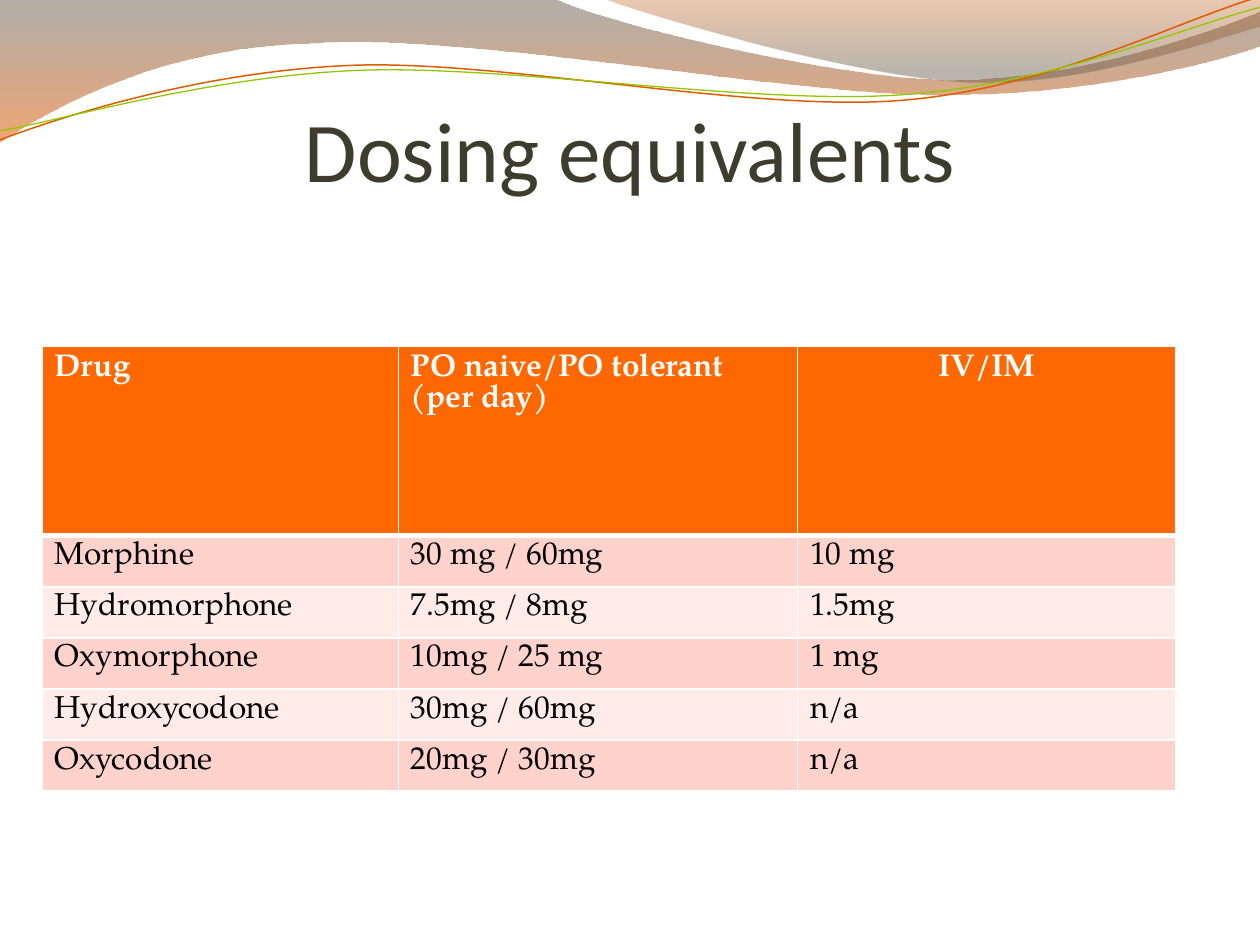
from lxml import etree
from pptx import Presentation
from pptx import util as u
from pptx.dml.color import RGBColor
from pptx.enum import text
from pptx.oxml.ns import qn

COLORS = {
    "title": "3E3D2D", "header": "FF6700", "band_dark": "FFD3CC", "band_light": "FFEBE7",
    "white": "FFFFFF", "black": "000000", "orange_line": "E15B00", "green_line": "94C600",
    "brown": "554D41", "orange": "E75D00", "rust": "BD4C00", "taupe": "685D4B",
}


def write_text(frame, words, font="TeX Gyre Pagella", size=18, color="black", bold=False,
               align=text.PP_ALIGN.LEFT, spacing=None):
    frame.word_wrap = True
    paragraph = frame.paragraphs[0]
    paragraph.alignment = align
    paragraph.line_spacing = spacing
    run = paragraph.add_run()
    run.text = words
    run.font.name = font
    run.font.size = u.Pt(size)
    run.font.bold = bold
    run.font.color.rgb = RGBColor.from_string(COLORS[color])


def add_outline(slide, start, segments, close):
    """Draw segments in cm: one point is a straight line, three points a cubic curve."""
    vertices = [(u.Cm(x), u.Cm(y)) for segment in segments for x, y in segment]
    builder = slide.shapes.build_freeform(u.Cm(start[0]), u.Cm(start[1]))
    builder.add_line_segments(vertices, close=close)
    shape = builder.convert_to_shape()
    shape.shadow.inherit = False
    lines = iter(list(shape._element.spPr.iter(qn("a:lnTo"))))
    for segment in segments:
        first, *others = [next(lines) for _ in segment]
        if others:
            first.tag = qn("a:cubicBezTo")
            for line in others:
                first.append(line[0])
                line.getparent().remove(line)
    return shape


presentation = Presentation()
presentation.slide_width, presentation.slide_height = u.Cm(25.4), u.Cm(19.05)
slide = presentation.slides.add_slide(presentation.slide_layouts[6])

# Translucent waves; gradient stops are (position, colour, opacity in percent)
waves = [
    ((0, 0), [
        [(11.18, -0.03)],
        [(12.09, 0.43), (16.87, 1.6), (19.25, 1.6)],
        [(21.67, 1.6), (24.33, 0.66), (25.4, 0.23)],
        [(25.43, 0.91)],
        [(24.97, 1.12), (22.1, 1.93), (18.95, 1.91)],
        [(15.8, 1.91), (9.7, 0.71), (6.53, 0.86)],
        [(3.28, 0.91), (1.17, 2.11), (-0.03, 2.87)],
    ], [(0, "brown", 45), (1, "orange", 55)]),
    ((12.17, -0.03), [
        [(12.93, 0.28), (17.32, 1.57), (19.53, 1.65)],
        [(21.74, 1.75), (24.41, 0.81), (25.4, 0.53)],
        [(25.4, 0)],
    ], [(0, "rust", 30), (0.8, "taupe", 45)]),
]
for start, segments, stops in waves:
    wave = add_outline(slide, start, segments, close=True)
    wave.line.fill.background()
    wave.fill.gradient()
    wave.fill.gradient_angle = 270
    for stop, (position, color, opacity) in zip(wave.fill.gradient_stops, stops):
        stop.position = position
        stop.color.rgb = RGBColor.from_string(COLORS[color])
    for element, (_, _, opacity) in zip(wave._element.spPr.iter(qn("a:srgbClr")), stops):
        etree.SubElement(element, qn("a:alpha"), val=str(opacity * 1000))

# Thin lines under the waves
ribbons = [
    ("orange_line", 0.85, (0, 2.82), [
        [(1.22, 2.36), (4.01, 1.45), (7.04, 1.32)],
        [(10.03, 1.19), (15.06, 2.26), (18.11, 2.03)],
        [(21.16, 1.8), (23.83, 0.38), (25.35, -0.05)],
    ]),
    ("green_line", 0.75, (0, 2.64), [
        [(1.19, 2.44), (4.17, 1.55), (7.19, 1.42)],
        [(10.24, 1.3), (15.16, 2.13), (18.21, 1.91)],
        [(21.23, 1.7), (23.9, 0.53), (25.4, 0.15)],
    ]),
]
for color, width, start, segments in ribbons:
    ribbon = add_outline(slide, start, segments, close=False)
    ribbon.fill.background()
    ribbon.line.color.rgb = RGBColor.from_string(COLORS[color])
    ribbon.line.width = u.Pt(width)

# Title
title = slide.shapes.add_textbox(u.Cm(1.27), u.Cm(1.96), u.Cm(22.86), u.Cm(2.1))
frame = title.text_frame
frame.margin_left = frame.margin_right = frame.margin_top = frame.margin_bottom = 0
write_text(frame, "Dosing equivalents", font="Calibri", size=48.6, color="title",
           align=text.PP_ALIGN.CENTER)

# Dosing table
rows = [
    ("Drug", "PO naive/PO tolerant (per day)", "IV/IM"),
    ("Morphine", "30 mg / 60mg", "10 mg"),
    ("Hydromorphone", "7.5mg / 8mg", "1.5mg"),
    ("Oxymorphone", "10mg / 25 mg", "1 mg"),
    ("Hydroxycodone", "30mg / 60mg", "n/a"),
    ("Oxycodone", "20mg / 30mg", "n/a"),
]
column_widths = [7.18, 8.05, 7.62]
row_heights = [3.81] + [1.03] * 5
table = slide.shapes.add_table(len(rows), len(column_widths), u.Cm(0.85), u.Cm(6.99),
                               u.Cm(sum(column_widths)), u.Cm(sum(row_heights))).table
table.horz_banding = False
for column, width in zip(table.columns, column_widths):
    column.width = u.Cm(width)
for row_index, (row, height) in enumerate(zip(rows, row_heights)):
    table.rows[row_index].height = u.Cm(height)
    is_header = row_index == 0
    fill = "header" if is_header else "band_dark" if row_index % 2 else "band_light"
    for column_index, words in enumerate(row):
        cell = table.cell(row_index, column_index)
        centered = is_header and column_index == 2
        write_text(cell.text_frame, words, color="white" if is_header else "black",
                   bold=is_header, spacing=u.Pt(18),
                   align=text.PP_ALIGN.CENTER if centered else text.PP_ALIGN.LEFT)
        properties = cell._tc.get_or_add_tcPr()
        for side in "LRTB":
            under_header = (row_index, side) in ((0, "B"), (1, "T"))
            border = etree.SubElement(properties, qn(f"a:ln{side}"),
                                      w=str(u.Pt(3 if under_header else 1)))
            border_fill = etree.SubElement(border, qn("a:solidFill"))
            etree.SubElement(border_fill, qn("a:srgbClr"), val=COLORS["white"])
        cell.fill.solid()
        cell.fill.fore_color.rgb = RGBColor.from_string(COLORS[fill])

presentation.save("out.pptx")
